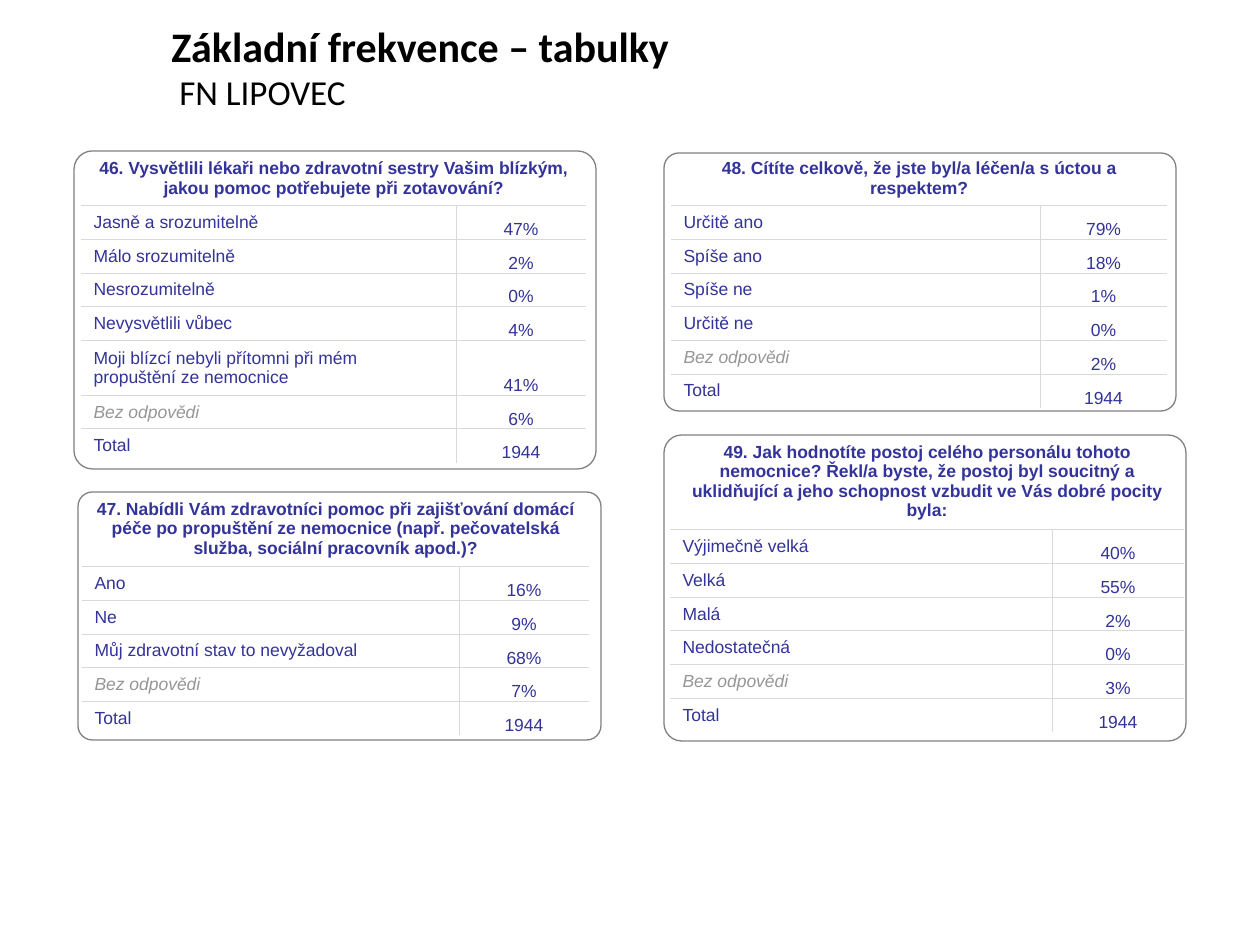
from lxml.etree import SubElement
from pptx import Presentation
from pptx.dml.color import RGBColor
from pptx.enum.shapes import MSO_SHAPE
from pptx.enum.text import MSO_ANCHOR, PP_ALIGN
from pptx.oxml.ns import qn
from pptx.util import Emu, Pt

INK, MUTED, GRID, EDGE = "333399", "969696", "D9D9D9", "808080"
ROW, LINE, PAD = 32, 20, 12
NO_STYLE = "{2D5ABB26-0587-4C30-8999-92F81FD0307C}"
BLANK = "Bez odpovědi"


def px(count):
    return Emu(count * 914400 // 126)


def color(code):
    return RGBColor.from_string(code)


class Deck:
    def __init__(self):
        self.show = Presentation()
        self.show.slide_width, self.show.slide_height = px(1260), px(945)
        self.slide = self.show.slides.add_slide(self.show.slide_layouts[6])

    def style(self, font, size, code, face, bold=False, italic=False):
        font.name, font.size = face, Pt(size)
        font.bold, font.italic = bold, italic
        font.color.rgb = color(code)

    def title(self, box, head, sub):
        frame = self.slide.shapes.add_textbox(*map(px, box)).text_frame
        frame.word_wrap = True
        frame.vertical_anchor = MSO_ANCHOR.MIDDLE
        para = frame.paragraphs[0]
        first = para.add_run()
        first.text = head
        self.style(first.font, 24, "000000", "Calibri", bold=True)
        para.add_line_break()
        second = para.add_run()
        second.text = sub
        self.style(second.font, 20, "000000", "Calibri")

    def border(self, cell, sides):
        props = cell._tc.get_or_add_tcPr()
        for side in sides:
            line = SubElement(props, qn("a:ln" + side), w=str(Pt(0.5)))
            fill = SubElement(line, qn("a:solidFill"))
            SubElement(fill, qn("a:srgbClr"), val=GRID)

    def cell(self, cell, text, sides, center=False, code=INK, **look):
        self.border(cell, sides)
        cell.text = text
        cell.vertical_anchor = MSO_ANCHOR.MIDDLE
        para = cell.text_frame.paragraphs[0]
        para.alignment = PP_ALIGN.CENTER if center else PP_ALIGN.LEFT
        self.style(para.font, 10, code, "Arial", **look)

    def table(self, left, top, cols, lines, head, rows):
        # Row heights follow the number of text lines
        tall = [PAD + LINE * lines]
        tall += [ROW + LINE * (len(name) > 50) for name, _ in rows]
        frame = self.slide.shapes.add_table(
            len(tall), 2, px(left), px(top), px(sum(cols)), px(sum(tall)))
        grid = frame.table
        grid.first_row = grid.horz_banding = False
        grid._tbl.tblPr.find(qn("a:tableStyleId")).text = NO_STYLE
        for col, wide in zip(grid.columns, cols):
            col.width = px(wide)
        for row, high in zip(grid.rows, tall):
            row.height = px(high)

        # Question across both columns
        grid.cell(0, 0).merge(grid.cell(0, 1))
        self.cell(grid.cell(0, 0), head, "B", center=True, bold=True)
        grid.cell(0, 0).fill.background()

        # Answers and shares
        for at, (name, share) in enumerate(rows, 1):
            low = "B" if at < len(rows) else ""
            label, value = grid.cell(at, 0), grid.cell(at, 1)
            mute = name == BLANK
            self.cell(label, name, "RT" + low,
                      code=MUTED if mute else INK, italic=mute)
            self.cell(value, share, "LT" + low, center=True)
            value.vertical_anchor = MSO_ANCHOR.BOTTOM
            value.margin_left = value.margin_right = value.margin_top = px(1)
            value.margin_bottom = 0
            for part in (label, value):
                part.fill.solid()
                part.fill.fore_color.rgb = color("FFFFFF")

    def panel(self, box):
        shape = self.slide.shapes.add_shape(
            MSO_SHAPE.ROUNDED_RECTANGLE, *map(px, box))
        shape.adjustments[0] = 0.058
        shape.shadow.inherit = False
        shape.fill.background()
        shape.line.color.rgb = color(EDGE)
        shape.line.width = Pt(0.75)


# Panel box, table left and top, columns, question lines, question, answers
PANELS = [
    ((74, 151, 522, 318), 81, 151, (375, 130), 2,
     "46. Vysvětlili lékaři nebo zdravotní sestry Vašim blízkým, "
     "jakou pomoc potřebujete při zotavování?",
     [("Jasně a srozumitelně", "47%"), ("Málo srozumitelně", "2%"),
      ("Nesrozumitelně", "0%"), ("Nevysvětlili vůbec", "4%"),
      ("Moji blízcí nebyli přítomni při mém propuštění ze nemocnice", "41%"),
      (BLANK, "6%")]),
    ((664, 153, 512, 258), 671, 151, (369, 127), 2,
     "48. Cítíte celkově, že jste byl/a léčen/a s úctou a respektem?",
     [("Určitě ano", "79%"), ("Spíše ano", "18%"), ("Spíše ne", "1%"),
      ("Určitě ne", "0%"), (BLANK, "2%")]),
    ((78, 492, 523, 248), 82, 491, (377, 130), 3,
     "47. Nabídli Vám zdravotníci pomoc při zajišťování domácí péče po "
     "propuštění ze nemocnice (např. pečovatelská služba, sociální "
     "pracovník apod.)?",
     [("Ano", "16%"), ("Ne", "9%"),
      ("Můj zdravotní stav to nevyžadoval", "68%"), (BLANK, "7%")]),
    ((664, 435, 522, 306), 670, 433, (382, 132), 4,
     "49. Jak hodnotíte postoj celého personálu tohoto nemocnice? Řekl/a "
     "byste, že postoj byl soucitný a uklidňující a jeho schopnost vzbudit "
     "ve Vás dobré pocity byla:",
     [("Výjimečně velká", "40%"), ("Velká", "55%"), ("Malá", "2%"),
      ("Nedostatečná", "0%"), (BLANK, "3%")]),
]


def main():
    deck = Deck()
    deck.title((159, 18, 1101, 97), "Základní frekvence – tabulky",
               " FN LIPOVEC")
    for box, left, top, cols, lines, head, rows in PANELS:
        deck.table(left, top, cols, lines, head, rows + [("Total", "1944")])
        deck.panel(box)
    deck.show.save("out.pptx")


if __name__ == "__main__":
    main()
